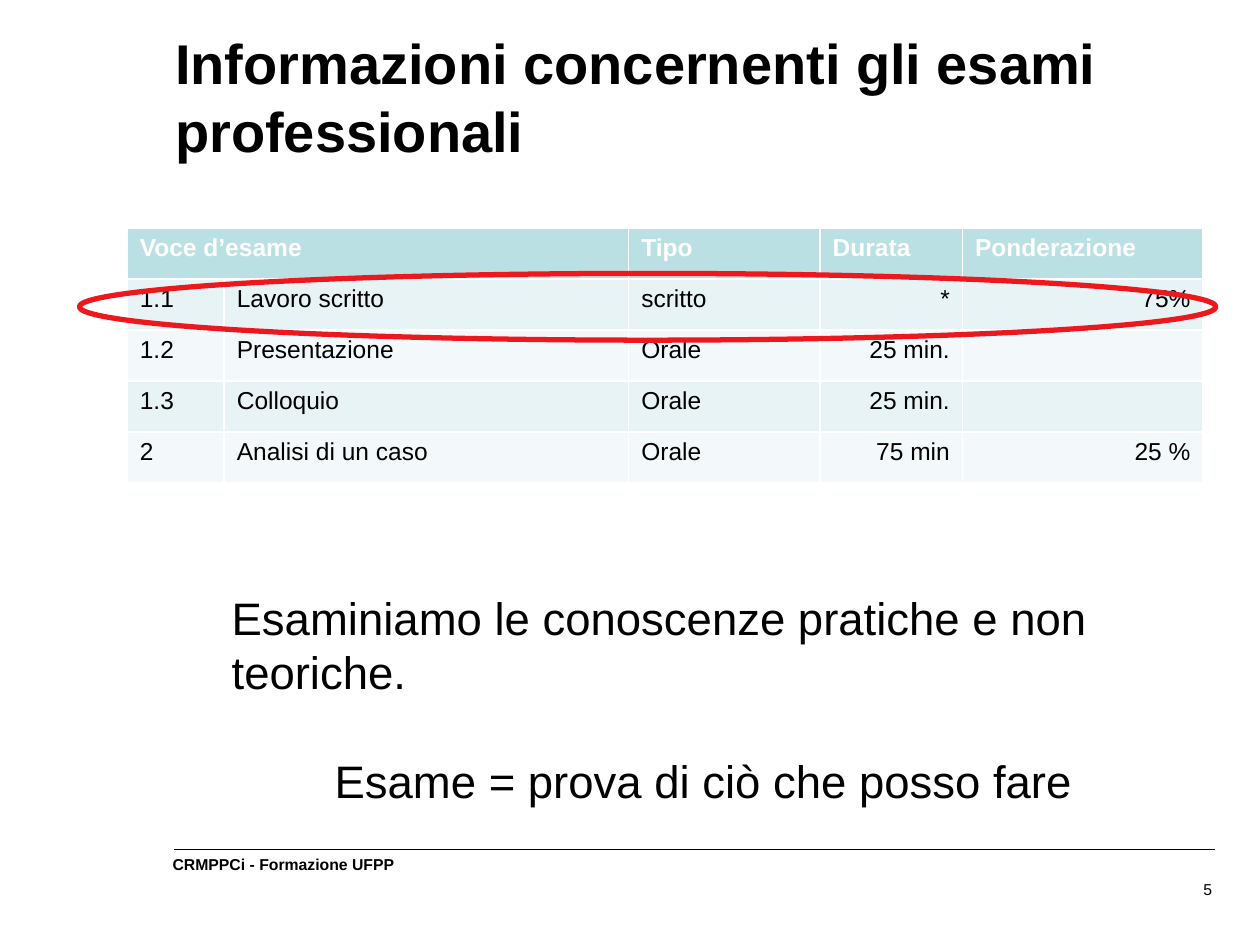
import dataclasses
import typing

import pptx
import pptx.dml.color
import pptx.enum.shapes
import pptx.enum.text
import pptx.util
from lxml import etree

Inches = pptx.util.Inches
Pt = pptx.util.Pt
Align = pptx.enum.text.PP_ALIGN
Anchor = pptx.enum.text.MSO_ANCHOR
Kind = pptx.enum.shapes.MSO_SHAPE

FONT = "Arial"
COLORS = {
    "text": "000000",
    "head": "BBE0E3",
    "odd": "E7F3F4",
    "even": "F3F9FA",
    "light": "FFFFFF",
    "mark": "ED181E",
}
WIDTHS = (0.77, 3.21, 1.52, 1.13, 1.91)
ROW = 0.405


@dataclasses.dataclass
class Box:
    left: float
    top: float
    width: float
    height: float

    def place(self) -> tuple:
        return tuple(Inches(n) for n in dataclasses.astuple(self))


@dataclasses.dataclass
class Exam:
    code: str
    name: str
    kind: str
    time: str
    weight: str = ""


EXAMS = (
    Exam("1.1", "Lavoro scritto", "scritto", "*", "75%"),
    Exam("1.2", "Presentazione", "Orale", "25 min."),
    Exam("1.3", "Colloquio", "Orale", "25 min."),
    Exam("2", "Analisi di un caso", "Orale", "75 min", "25 %"),
)


def color(name: str) -> pptx.dml.color.RGBColor:
    return pptx.dml.color.RGBColor.from_string(COLORS[name])


def write(par: typing.Any, text: str, size: float = 14, bold: bool = False,
          ink: str = "text", align: Align = Align.LEFT, before: float = 0) -> None:
    par.text = text
    par.alignment = align
    par.space_before = Pt(before)
    font = par.font
    font.name, font.size, font.bold = FONT, Pt(size), bold
    font.color.rgb = color(ink)


def trim(frame: typing.Any) -> None:
    """Remove the inner margins of a text frame."""
    frame.margin_left = frame.margin_right = 0
    frame.margin_top = frame.margin_bottom = 0


def add_note(slide: typing.Any, box: Box, text: str, **style: typing.Any) -> None:
    """Add a one-line text box without margins."""
    frame = slide.shapes.add_textbox(*box.place()).text_frame
    trim(frame)
    frame.word_wrap = False
    write(frame.paragraphs[0], text, **style)


def add_title(slide: typing.Any, box: Box, text: str) -> None:
    title = slide.shapes.title
    title.left, title.top, title.width, title.height = box.place()
    frame = title.text_frame
    trim(frame)
    frame.word_wrap = True
    frame.vertical_anchor = Anchor.TOP
    write(frame.paragraphs[0], text, size=32, bold=True)


def add_rule(slide: typing.Any, left: float, right: float, top: float) -> None:
    rule = slide.shapes.add_connector(
        pptx.enum.shapes.MSO_CONNECTOR.STRAIGHT,
        Inches(right), Inches(top), Inches(left), Inches(top))
    rule.line.color.rgb = color("text")
    rule.line.width = Pt(0.75)
    props = rule._element.spPr
    etree.SubElement(props, pptx.oxml.ns.qn("a:effectLst"))


def add_exams(slide: typing.Any, left: float, top: float) -> None:
    heads = ("Voce d’esame", "", "Tipo", "Durata", "Ponderazione")
    rows = [heads] + [dataclasses.astuple(exam) for exam in EXAMS]
    box = Box(left, top, sum(WIDTHS), ROW * len(rows))
    table = slide.shapes.add_table(len(rows), len(WIDTHS), *box.place()).table
    for col, width in zip(table.columns, WIDTHS):
        col.width = Inches(width)
    table.cell(0, 0).merge(table.cell(0, 1))
    for r, row in enumerate(rows):
        head = r == 0
        fill = "head" if head else "odd" if r % 2 else "even"
        for c, text in enumerate(row):
            cell = table.cell(r, c)
            cell.fill.solid()
            cell.fill.fore_color.rgb = color(fill)
            write(cell.text_frame.paragraphs[0], text, bold=head,
                  ink="light" if head else "text",
                  align=Align.RIGHT if c > 2 and not head else Align.LEFT)


def add_body(slide: typing.Any, box: Box) -> None:
    frame = slide.shapes.add_textbox(*box.place()).text_frame
    frame.word_wrap = True
    write(frame.paragraphs[0],
          "Esaminiamo le conoscenze pratiche e non teoriche.", size=26)
    write(frame.add_paragraph(), "Esame = prova di ciò che posso fare",
          size=26, align=Align.CENTER, before=31)


def add_ring(slide: typing.Any, box: Box) -> None:
    ring = slide.shapes.add_shape(Kind.OVAL, *box.place())
    ring.shadow.inherit = False
    ring.fill.background()
    ring.line.color.rgb = color("mark")
    ring.line.width = Pt(3)


def main() -> None:
    deck = pptx.Presentation()
    deck.slide_width, deck.slide_height = Inches(10), Inches(7.5)
    slide = deck.slides.add_slide(deck.slide_layouts[5])
    add_title(slide, Box(1.39, 0.23, 8.16, 1.08),
              "Informazioni concernenti gli esami professionali")
    add_note(slide, Box(9.37, 6.98, 0.25, 0.15), "5", size=9, align=Align.RIGHT)
    add_note(slide, Box(1.37, 6.78, 1.83, 0.15), "CRMPPCi - Formazione UFPP",
             size=9, bold=True)
    add_rule(slide, 1.38, 9.64, 6.74)
    add_exams(slide, 1.01, 1.81)
    add_body(slide, Box(1.74, 4.63, 7.69, 1.85))
    add_ring(slide, Box(0.63, 2.17, 9.02, 0.53))
    deck.save("out.pptx")


if __name__ == "__main__":
    main()
